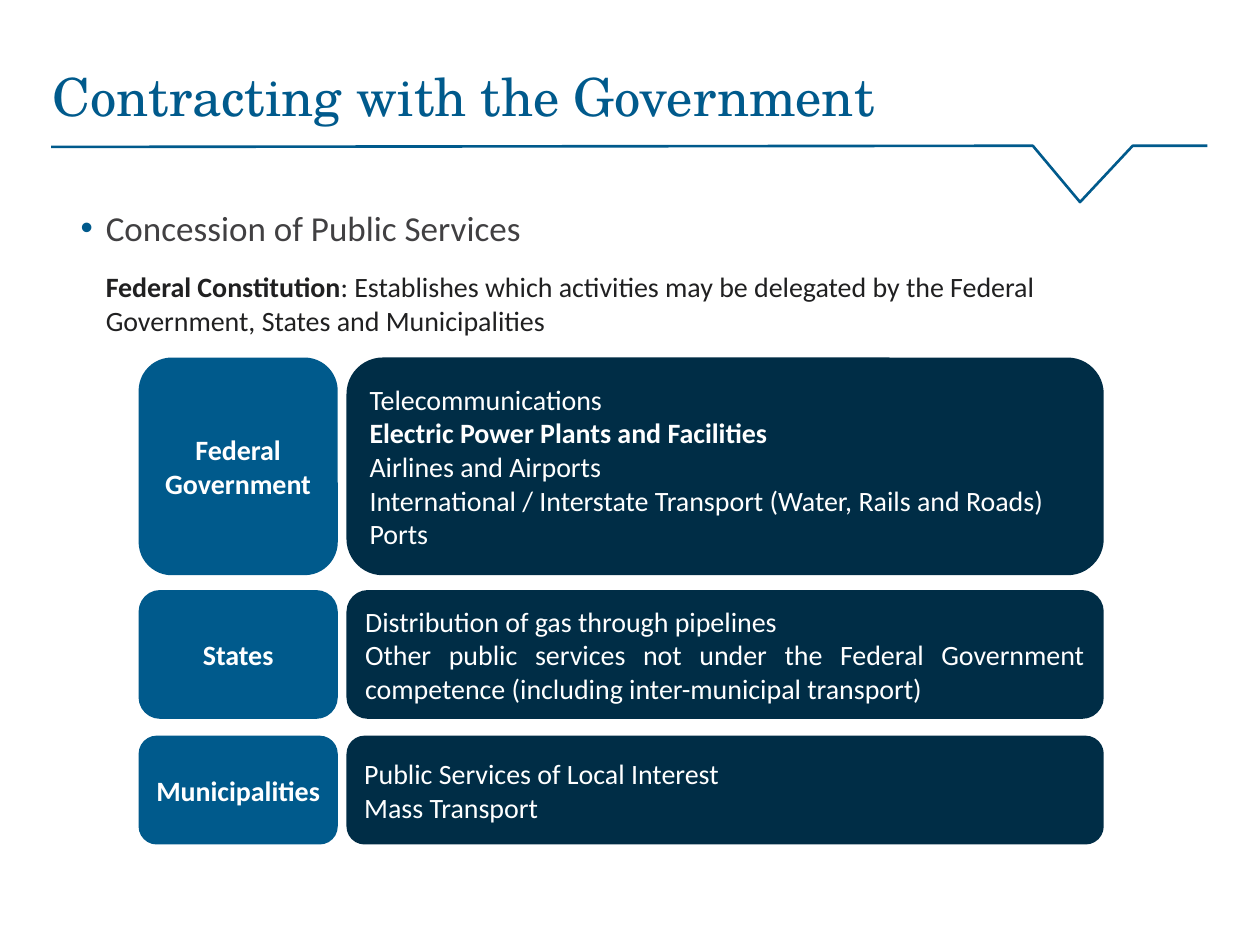
from pptx import Presentation
from pptx.dml.color import RGBColor
from pptx.enum import shapes, text
from pptx.oxml import parse_xml
from pptx.oxml.ns import nsdecls
from pptx.util import Pt

COLORS = {"blue": "005A8C", "navy": "002D46", "white": "FFFFFF", "gray": "414042", "ink": "202021"}


class SlideBuilder:
    """Draw styled elements on the current slide, with lengths in points."""

    body_font = "Calibri"
    title_font = "TeX Gyre Schola"

    def __init__(self, page):
        self.page = page

    def color(self, name):
        return RGBColor.from_string(COLORS[name])

    def style(self, para, size, color, font=None, bold=False):
        para.font.name = font or self.body_font
        para.font.size = Pt(size)
        para.font.bold = bold
        para.font.color.rgb = self.color(color)

    def outline(self, points):
        start, *rest = [(Pt(x), Pt(y)) for x, y in points]
        builder = self.page.shapes.build_freeform(*start)
        builder.add_line_segments(rest, close=False)
        line = builder.convert_to_shape()
        line.shadow.inherit = False
        line.fill.solid()
        line.fill.fore_color.rgb = self.color("white")
        line.line.color.rgb = self.color("blue")
        line.line.width = Pt(1.5)

    def text_frame(self, left, top, width, height):
        frame = self.page.shapes.add_textbox(Pt(left), Pt(top), Pt(width), Pt(height)).text_frame
        frame.word_wrap = True
        frame.margin_left = frame.margin_right = frame.margin_top = frame.margin_bottom = 0
        return frame

    def title(self, wording, *area):
        para = self.text_frame(*area).paragraphs[0]
        para.text = wording
        self.style(para, 30, "blue", self.title_font)

    def body(self, heading, term, explanation, *area):
        frame = self.text_frame(*area)
        first, second = frame.paragraphs[0], frame.add_paragraph()
        for para, indent in ((first, -14.4), (second, 0)):
            para.space_after = Pt(12)
            properties = para._p.get_or_add_pPr()
            properties.set("marL", str(Pt(14.4)))
            properties.set("indent", str(Pt(indent)))
        bullet = first._p.get_or_add_pPr()
        bullet.append(parse_xml(f'<a:buClr {nsdecls("a")}><a:srgbClr val="{COLORS["blue"]}"/></a:buClr>'))
        bullet.append(parse_xml(f'<a:buFont {nsdecls("a")} typeface="Arial"/>'))
        bullet.append(parse_xml(f'<a:buChar {nsdecls("a")} char="•"/>'))
        first.add_run().text = heading
        self.style(first, 20, "gray")
        for wording, bold in ((term, True), (explanation, False)):
            span = second.add_run()
            span.text = wording
            span.font.bold = bold
        self.style(second, 16, "ink")

    def card(self, area, fill, lines, align, bold_lines=()):
        box = self.page.shapes.add_shape(
            shapes.MSO_SHAPE.ROUNDED_RECTANGLE, *[Pt(length) for length in area])
        box.shadow.inherit = False
        box.fill.solid()
        box.fill.fore_color.rgb = self.color(fill)
        box.line.fill.background()
        frame = box.text_frame
        frame.word_wrap = True
        frame.vertical_anchor = text.MSO_ANCHOR.MIDDLE
        for index, wording in enumerate(lines):
            para = frame.add_paragraph() if index else frame.paragraphs[0]
            para.text = wording
            para.alignment = align
            self.style(para, 16, "white", bold=wording in bold_lines)
        return frame

    def row(self, top, height, label, lines, bold_lines=()):
        frame = self.card((79.2, top, 113.8, height), "blue", [label], text.PP_ALIGN.CENTER, [label])
        frame.margin_left = frame.margin_right = 0
        frame.margin_top = frame.margin_bottom = Pt(2.9)
        self.card((198, top, 432.7, height), "navy", lines, text.PP_ALIGN.JUSTIFY, bold_lines)


def main():
    deck = Presentation()
    deck.slide_width, deck.slide_height = Pt(720), Pt(540)
    slide = SlideBuilder(deck.slides.add_slide(deck.slide_layouts[6]))
    slide.outline([(690, 83.3), (647.3, 83.3), (617.2, 115.5), (590.2, 83.3), (29.3, 84)])
    slide.title("Contracting with the Government", 30.2, 36.7, 629.3, 63.4)
    slide.body(
        "Concession of Public Services",
        "Federal Constitution",
        ": Establishes which activities may be delegated by the Federal Government, States and Municipalities",
        46.1, 118.1, 629.3, 366.5)
    power = "Electric Power Plants and Facilities"
    slide.row(204.3, 124.4, "Federal Government", [
        "Telecommunications",
        power,
        "Airlines and Airports",
        "International / Interstate Transport (Water, Rails and Roads)",
        "Ports",
    ], [power])
    slide.row(337.2, 73.6, "States", [
        "Distribution of gas through pipelines",
        "Other public services not under the Federal Government competence "
        "(including inter-municipal transport)",
    ])
    slide.row(420.4, 62.2, "Municipalities", ["Public Services of Local Interest", "Mass Transport"])
    deck.save("out.pptx")


if __name__ == "__main__":
    main()
